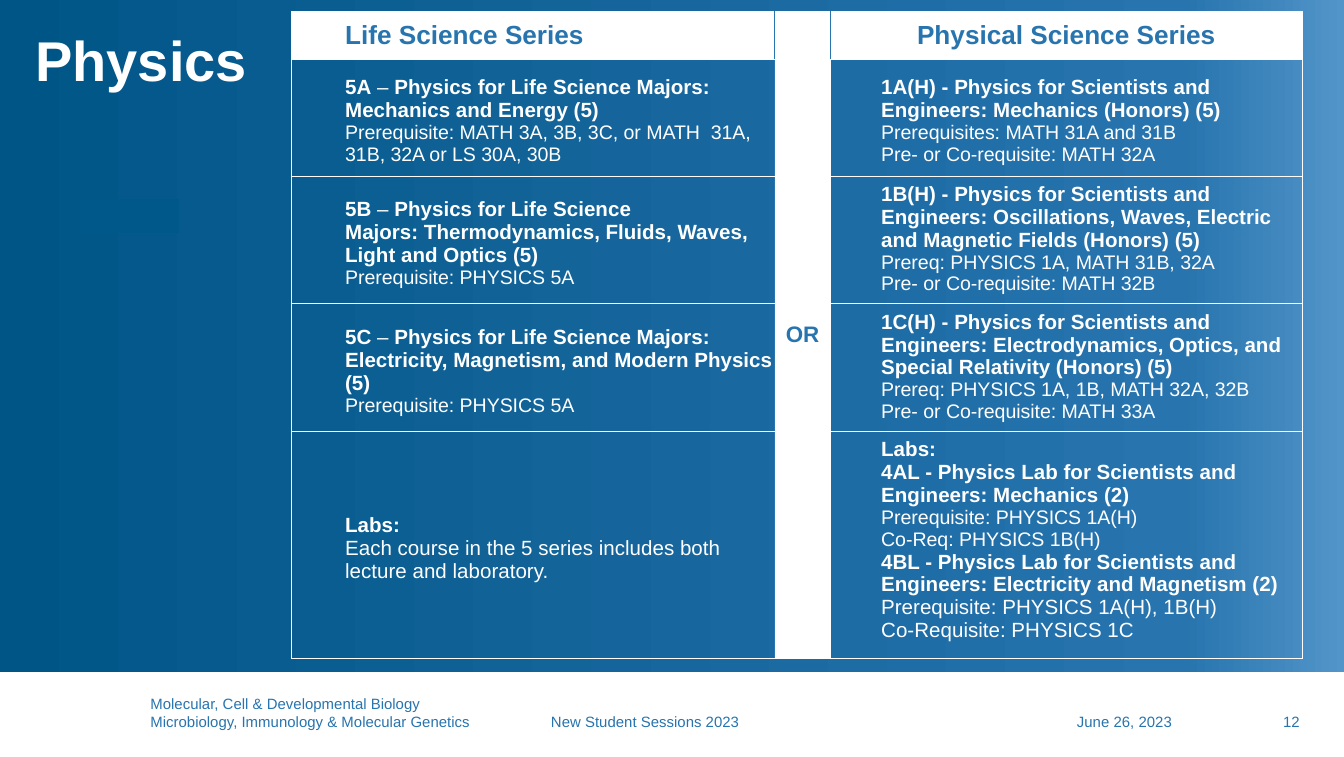
from copy import deepcopy
from dataclasses import dataclass

from lxml import etree
from pptx import Presentation
from pptx.dml.color import RGBColor
from pptx.enum.shapes import MSO_SHAPE
from pptx.enum.text import MSO_ANCHOR, PP_ALIGN
from pptx.oxml.ns import qn
from pptx.util import Pt

RECTANGLE = MSO_SHAPE.RECTANGLE
TOP, MIDDLE, BOTTOM = MSO_ANCHOR.TOP, MSO_ANCHOR.MIDDLE, MSO_ANCHOR.BOTTOM
LEFT, CENTER, RIGHT = PP_ALIGN.LEFT, PP_ALIGN.CENTER, PP_ALIGN.RIGHT
HARD_SPACE = chr(160)


@dataclass(frozen=True)
class Theme:
    font: str = "Arial"
    white: str = "FFFFFF"
    blue: str = "2774AE"
    patch: str = "00578A"
    gradient: tuple = ((0, "005587"), (0.88, "2774AE"), (1, "5295C9"))
    title: float = 30
    header: float = 14
    divider: float = 12
    course: float = 11
    note: float = 10.5
    footer: float = 8
    line: float = 0.5


THEME = Theme()


def course(text):
    """A bold course line; ~ stands for a space that does not break."""
    return [(text.replace("~", HARD_SPACE), THEME.course, True)]


def note(text, size=THEME.note):
    return [(text.replace("~", HARD_SPACE), size, False)]


def coded(code, name):
    return course(code) + note(" – ", THEME.course) + course(name)


LIFE = [
    [coded("5A", "Physics for Life Science Majors: Mechanics~and Energy (5)"),
     note("Prerequisite: MATH 3A, 3B, 3C, or MATH~ 31A, 31B, 32A or LS 30A, 30B")],
    [coded("5B", "Physics for Life Science Majors:~Thermodynamics, Fluids, Waves, Light and~Optics (5)"),
     note("Prerequisite: PHYSICS 5A")],
    [coded("5C", "Physics for Life Science Majors: Electricity,~Magnetism, and Modern Physics (5)"),
     note("Prerequisite: PHYSICS 5A")],
    [course("Labs:"),
     note("Each course in the 5 series includes both lecture and laboratory.", THEME.course)],
]
PHYSICAL = [
    [course("1A(H) - Physics for Scientists and Engineers:~Mechanics (Honors) (5)"),
     note("Prerequisites: MATH 31A and 31B"),
     note("Pre- or Co-requisite: MATH 32A")],
    [course("1B(H) - Physics for Scientists and Engineers:~Oscillations, Waves, Electric "
            "and Magnetic Fields (Honors) (5)"),
     note("Prereq: PHYSICS 1A, MATH 31B, 32A"),
     note("Pre- or Co-requisite: MATH 32B")],
    [course("1C(H) - Physics for Scientists and Engineers:~Electrodynamics, Optics, "
            "and Special~Relativity (Honors) (5)"),
     note("Prereq: PHYSICS 1A, 1B, MATH 32A, 32B"),
     note("Pre- or Co-requisite: MATH 33A")],
    [course("Labs:"),
     course("4AL - Physics Lab for Scientists and Engineers:~Mechanics (2)"),
     note("Prerequisite: PHYSICS 1A(H)"),
     note("Co-Req: PHYSICS 1B(H)"),
     course("4BL - Physics Lab for Scientists and Engineers: Electricity and Magnetism (2)"),
     note("Prerequisite: PHYSICS 1A(H), 1B(H)", THEME.course),
     note("Co-Requisite: PHYSICS 1C", THEME.course)],
]


def write(frame, paragraphs, *, color, align=LEFT, indent=0, spacing=None):
    """Fill a text frame; each paragraph is a list of (text, size, bold)."""
    frame.word_wrap = True
    for index, spans in enumerate(paragraphs):
        para = frame.add_paragraph() if index else frame.paragraphs[0]
        para.alignment = align
        if spacing:
            para.line_spacing = spacing
        if indent:
            para.level = 1
            properties = para._p.get_or_add_pPr()
            properties.set("marL", str(Pt(indent)))
            properties.set("indent", "0")
        for text, size, bold in spans:
            span = para.add_run()
            span.text = text
            span.font.name = THEME.font
            span.font.size = Pt(size)
            span.font.bold = bold
            span.font.color.rgb = RGBColor.from_string(color)


def set_margins(target, left, top, right, bottom):
    target.margin_left, target.margin_top = Pt(left), Pt(top)
    target.margin_right, target.margin_bottom = Pt(right), Pt(bottom)


def add_text(page, area, paragraphs, *, margins, anchor=TOP, **style):
    box = page.shapes.add_textbox(*map(Pt, area))
    set_margins(box.text_frame, *margins)
    box.text_frame.vertical_anchor = anchor
    write(box.text_frame, paragraphs, **style)


def add_rectangle(page, area, color, outlined=False):
    shape = page.shapes.add_shape(RECTANGLE, *map(Pt, area))
    shape.shadow.inherit = False
    shape.fill.solid()
    shape.fill.fore_color.rgb = RGBColor.from_string(color)
    if outlined:
        shape.line.color.rgb = RGBColor.from_string(color)
        shape.line.width = Pt(THEME.line)
    else:
        shape.line.fill.background()


def paint_background(page):
    fill = page.background.fill
    fill.gradient()
    fill.gradient_angle = 0
    stop_list = page._element.find(".//" + qn("a:gsLst"))
    stop_list.append(deepcopy(stop_list[0]))
    for stop, (position, color) in zip(fill.gradient_stops, THEME.gradient):
        stop.position = position
        stop.color.rgb = RGBColor.from_string(color)


def draw_borders(cell, colors):
    """Give the cell its left, right, top and bottom lines."""
    properties = cell._tc.get_or_add_tcPr()
    for index, (side, color) in enumerate(zip("LRTB", colors)):
        line = etree.Element(qn("a:ln" + side), w=str(Pt(THEME.line)))
        solid = etree.SubElement(line, qn("a:solidFill"))
        etree.SubElement(solid, qn("a:srgbClr"), val=color)
        properties.insert(index, line)


def fill_cell(cell, paragraphs, *, margins=(0, 0, 0, 0), anchor=MIDDLE, fill=None, **style):
    set_margins(cell, *margins)
    cell.vertical_anchor = anchor
    if fill:
        cell.fill.solid()
        cell.fill.fore_color.rgb = RGBColor.from_string(fill)
    else:
        cell.fill.background()
    write(cell.text_frame, paragraphs, **style)


def add_course_table(page, area):
    widths, heights = (258.8, 30.2, 252.4), (25.7, 62.6, 62.6, 62.6, 40.3)
    frame = page.shapes.add_table(len(heights), len(widths), *map(Pt, area))
    table = frame.table
    table.first_row = table.horz_banding = False
    for column, width in zip(table.columns, widths):
        column.width = Pt(width)
    for row, height in zip(table.rows, heights):
        row.height = Pt(height)
    frame.height = Pt(area[3])

    table.cell(0, 1).merge(table.cell(len(heights) - 1, 1))
    header = dict(color=THEME.blue, fill=THEME.white)
    fill_cell(table.cell(0, 0), [[("Life Science Series", THEME.header, True)]],
              margins=(28.8, 0, 0, 0), **header)
    fill_cell(table.cell(0, 1), [[("OR", THEME.divider, True)]], align=CENTER, **header)
    fill_cell(table.cell(0, 2), [[("Physical Science Series", THEME.header, True)]],
              align=CENTER, **header)

    for row, (life, physical) in enumerate(zip(LIFE, PHYSICAL), start=1):
        fill_cell(table.cell(row, 0), life, margins=(28.8, 3.6, 0, 0), color=THEME.white)
        fill_cell(table.cell(row, 2), physical, margins=(0, 3.6, 0, 0), color=THEME.white,
                  anchor=MIDDLE if row == 1 else TOP, indent=27)

    for row in range(len(heights)):
        inner = THEME.white if row else THEME.blue
        sides = (THEME.white, inner, inner, THEME.white)
        for column in range(len(widths)):
            draw_borders(table.cell(row, column),
                         (sides[column], sides[column + 1], THEME.white, THEME.white))


def add_footer(page, area):
    left, top, width, height = area
    add_rectangle(page, area, THEME.white)
    base = top + 31.6
    entries = (
        (80.6, 208.8, 20.2, 0, LEFT, ["Molecular, Cell & Developmental Biology",
                                      "Microbiology, Immunology & Molecular Genetics"]),
        (295.2, 230.4, 10.8, 0, LEFT, ["New Student Sessions 2023"]),
        (527, 108, 10.8, 7.2, RIGHT, ["June 26, 2023"]),
        (640.8, 62.6, 10.8, 7.2, RIGHT, ["12"]),
    )
    for offset, size, tall, inset, align, lines in entries:
        add_text(page, (left + offset, base - tall, size, tall),
                 [note(line, THEME.footer) for line in lines],
                 margins=(inset, 0.7, 7.2, 0.7), anchor=BOTTOM, color=THEME.blue, align=align)


def build_slide(deck):
    page = deck.slides.add_slide(deck.slide_layouts[6])
    paint_background(page)
    add_footer(page, (0, 360, 720, 45.36))
    add_text(page, (11.9, 14.4, 576, 40.3), [[("Physics", THEME.title, True)]],
             margins=(7.2, 3.6, 7.2, 3.6), color=THEME.white, spacing=0.9)
    add_course_table(page, (156.1, 6, 541.4, 345.6))
    add_rectangle(page, (43.2, 106.6, 52.6, 18), THEME.patch, outlined=True)


def main():
    deck = Presentation()
    deck.slide_width, deck.slide_height = Pt(720), Pt(405.36)
    build_slide(deck)
    deck.save("out.pptx")


if __name__ == "__main__":
    main()
